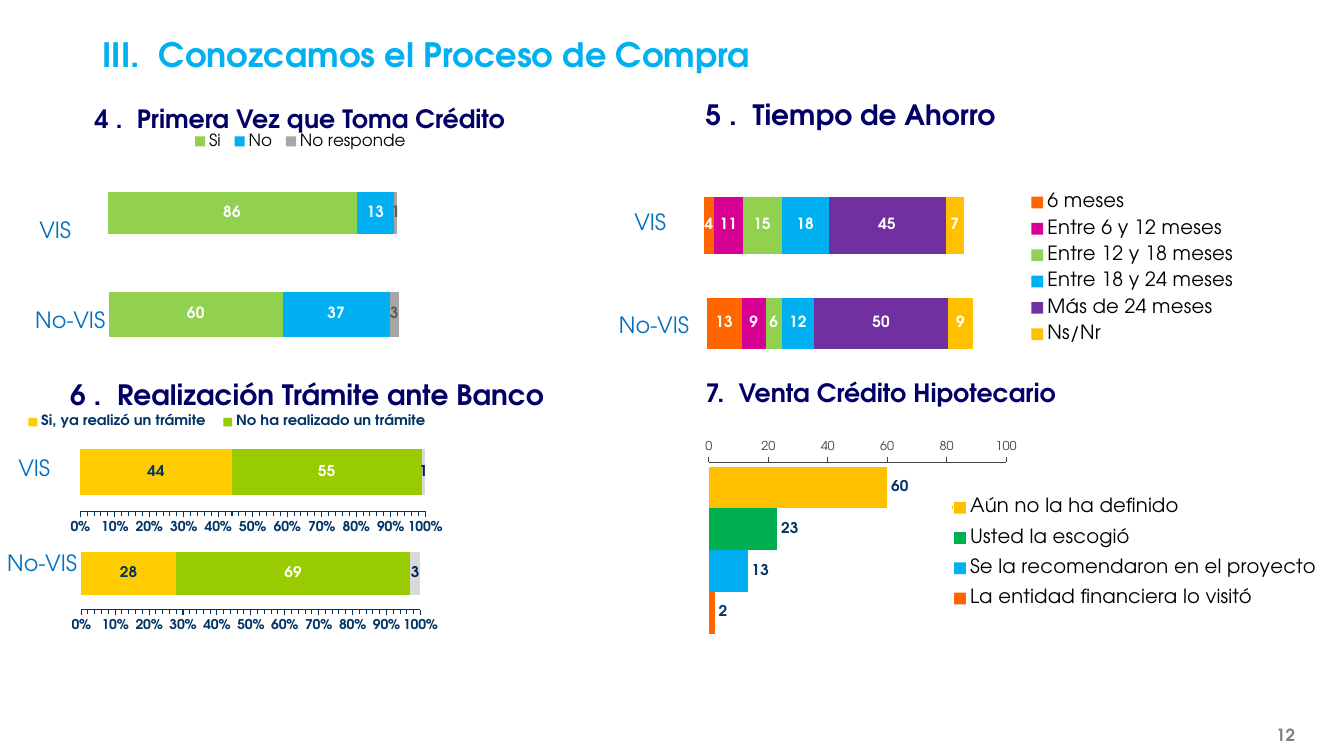
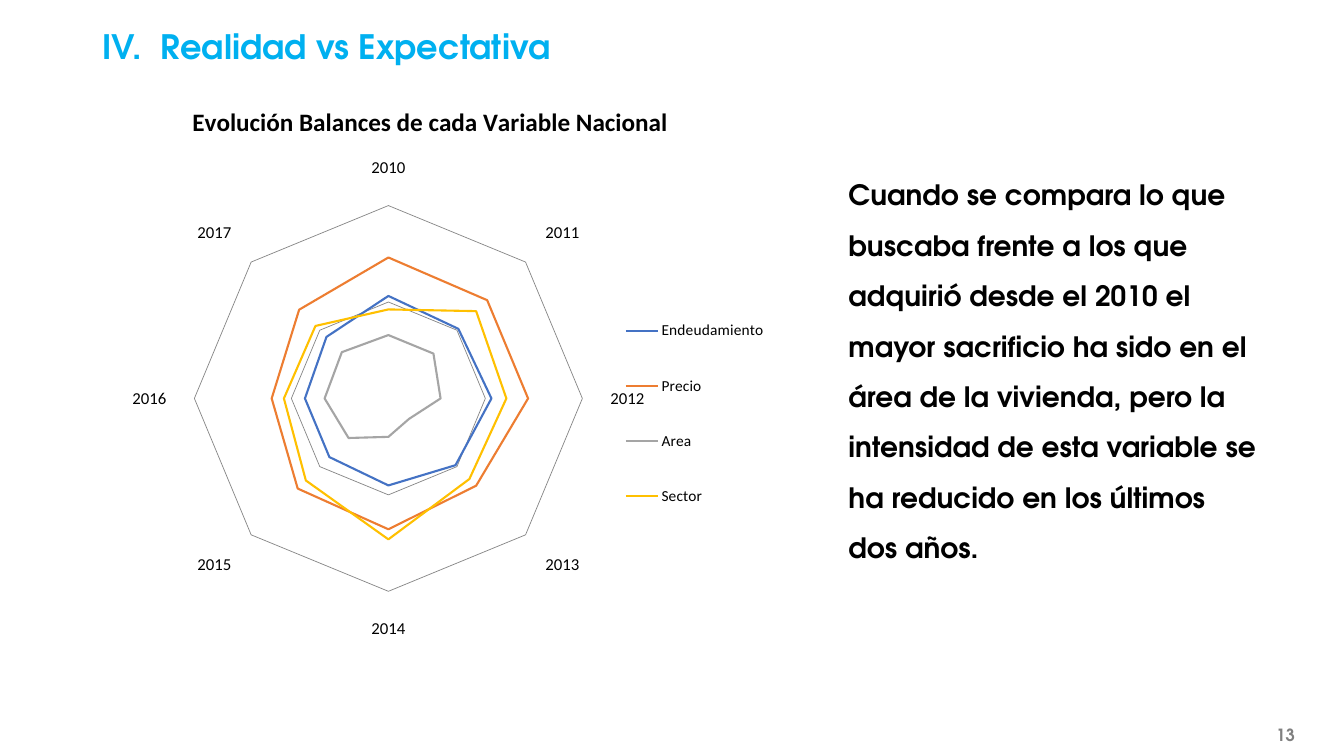
from dataclasses import dataclass

import pptx
import pptx.chart.data
import pptx.dml.color
import pptx.enum.chart
import pptx.enum.shapes
import pptx.enum.text
import pptx.oxml
import pptx.oxml.ns
import pptx.util
from lxml import etree

Pt = pptx.util.Pt
qn = pptx.oxml.ns.qn
Kind = pptx.enum.chart.XL_CHART_TYPE
LabelPosition = pptx.enum.chart.XL_LABEL_POSITION
LegendPosition = pptx.enum.chart.XL_LEGEND_POSITION
TickMark = pptx.enum.chart.XL_TICK_MARK
Align = pptx.enum.text.PP_ALIGN


@dataclass(frozen=True)
class Theme:
    font: str = "TeX Gyre Adventor"
    radar_font: str = "Calibri"
    title: str = "00B0F0"
    heading: str = "000066"
    row: str = "0070C0"
    navy: str = "003366"
    deep_navy: str = "002060"
    black: str = "000000"
    white: str = "FFFFFF"
    page: str = "808080"
    dark_gray: str = "595959"
    axis: str = "404040"
    grid: str = "868686"
    silver: str = "A6A6A6"
    pale: str = "D9D9D9"
    lime: str = "92D050"
    sky: str = "00B0F0"
    orange: str = "FF6600"
    magenta: str = "D60093"
    purple: str = "7030A0"
    amber: str = "FFC000"
    green: str = "00B050"
    yellow: str = "FFCC00"
    olive: str = "99CC00"
    radar_lines: tuple = ("4472C4", "ED7D31", "A5A5A5", "FFC000")
    title_size: int = 24
    heading_size: int = 20
    small_heading_size: int = 18
    row_size: int = 16
    legend_size: int = 14
    small_size: int = 12
    label_size: int = 11
    tick_size: int = 10
    fine_size: int = 9


THEME = Theme()


@dataclass(frozen=True)
class Box:
    left: float
    top: float
    width: float
    height: float

    def inner(self, dx, dy, width, height):
        return Box(self.left + dx, self.top + dy, width, height)

    def lengths(self):
        return [Pt(v) for v in (self.left, self.top, self.width, self.height)]


def rgb(color):
    return pptx.dml.color.RGBColor.from_string(color)


def style_font(font, size, color, bold=False, name=THEME.font):
    font.size = Pt(size)
    font.name = name
    font.bold = bold
    font.color.rgb = rgb(color)


def write(frame, text, size=12, color=THEME.black, bold=False,
          align=Align.LEFT, spacing=None):
    frame.word_wrap = True
    frame.auto_size = pptx.enum.text.MSO_AUTO_SIZE.NONE
    frame.vertical_anchor = pptx.enum.text.MSO_ANCHOR.TOP
    paragraph = frame.paragraphs[0]
    paragraph.alignment = align
    paragraph.line_spacing = spacing
    run = paragraph.add_run()
    run.text = text
    style_font(run.font, size, color, bold)


def add_text(slide, box, text, **style):
    write(slide.shapes.add_textbox(*box.lengths()).text_frame, text, **style)


def add_heading(slide, box, text, size=THEME.heading_size):
    add_text(slide, box, text, size=size, color=THEME.heading, bold=True)


def add_row_name(slide, box, text):
    add_text(slide, box, text, size=THEME.row_size, color=THEME.row)


def add_page_number(slide, box, page):
    badge = slide.shapes.add_shape(pptx.enum.shapes.MSO_SHAPE.OVAL, *box.lengths())
    badge.shadow.inherit = False
    badge.fill.solid()
    badge.fill.fore_color.rgb = rgb(THEME.white)
    badge.line.color.rgb = rgb(THEME.white)
    badge.line.width = Pt(1)
    badge.text_frame.margin_left = badge.text_frame.margin_right = 0
    write(badge.text_frame, page, size=THEME.small_size, color=THEME.page,
          bold=True, align=Align.CENTER)


def titled_slide(deck, title, top, page):
    slide = deck.slides.add_slide(deck.slide_layouts[5])
    heading = slide.shapes.title
    heading.left, heading.top, heading.width, heading.height = Box(66, top, 879, 36).lengths()
    write(heading.text_frame, title, size=THEME.title_size, color=THEME.title, bold=True)
    add_page_number(slide, Box(895.5, 510.5, 45.5, 26), page)
    return slide


def place(part, fractions, inner=False):
    for old in part.findall(qn("c:layout")):
        part.remove(old)
    layout = part.makeelement(qn("c:layout"))
    manual = etree.SubElement(layout, qn("c:manualLayout"))
    settings = [("layoutTarget", "inner")] if inner else []
    settings += [("xMode", "edge"), ("yMode", "edge")]
    settings += list(zip("xywh", fractions))
    for tag, value in settings:
        etree.SubElement(manual, qn("c:" + tag)).set("val", str(value))
    leading = {qn("c:tx"), qn("c:legendPos"), qn("c:legendEntry")}
    part.insert(sum(child.tag in leading for child in part), layout)


def chart_part(chart, tag):
    return next(chart._chartSpace.iter(qn("c:" + tag)))


def add_legend(chart, fractions, position, size, color=THEME.black, bold=False,
               font=THEME.font, omitted=None):
    chart.has_legend = True
    legend = chart.legend
    legend.position = position
    legend.include_in_layout = False
    style_font(legend.font, size, color, bold, font)
    part = chart_part(chart, "legend")
    if omitted is not None:
        entry = part.makeelement(qn("c:legendEntry"))
        etree.SubElement(entry, qn("c:idx")).set("val", str(omitted))
        etree.SubElement(entry, qn("c:delete")).set("val", "1")
        part.find(qn("c:legendPos")).addnext(entry)
    place(part, fractions)


def add_chart(slide, box, kind, categories, series, plot, font=THEME.font):
    data = pptx.chart.data.CategoryChartData(number_format="0")
    data.categories = categories
    for name, values in series:
        data.add_series(name, values)
    chart = slide.shapes.add_chart(kind, *box.lengths(), data).chart
    style_font(chart.font, THEME.tick_size, THEME.black, name=font)
    chart.has_title = False
    chart.has_legend = False
    place(chart_part(chart, "plotArea"), plot, inner=True)
    return chart


def add_bars(slide, box, answers, values, plot, kind=Kind.BAR_STACKED,
             gap=20, top=100, step=20, labelled=True):
    series = [(name, [value]) for (name, _, _), value in zip(answers, values)]
    chart = add_chart(slide, box, kind, ["1"], series, plot)
    bars = chart.plots[0]
    bars.vary_by_categories = False
    bars.gap_width = gap
    clustered = kind == Kind.BAR_CLUSTERED
    bars.overlap = 0 if clustered else 100
    chart.category_axis.visible = False
    chart.category_axis.reverse_order = clustered
    scale = chart.value_axis
    scale.has_major_gridlines = False
    scale.visible = False
    scale.minimum_scale = 0
    scale.maximum_scale = top
    scale.major_unit = step
    for bar, (_, fill, label_color) in zip(bars.series, answers):
        bar.format.fill.solid()
        bar.format.fill.fore_color.rgb = rgb(fill)
        bar.format.line.fill.background()
        bar.invert_if_negative = False
        if labelled:
            labels = bar.data_labels
            labels.show_value = True
            labels.number_format = "0"
            labels.number_format_is_linked = False
            labels.position = LabelPosition.OUTSIDE_END if clustered else LabelPosition.CENTER
            style_font(labels.font, THEME.label_size, label_color, True)
    return chart


def show_scale(chart, number_format, size, color, bold=False):
    scale = chart.value_axis
    scale.visible = True
    scale.major_tick_mark = TickMark.OUTSIDE
    scale.tick_labels.number_format = number_format
    scale.tick_labels.number_format_is_linked = False
    style_font(scale.tick_labels.font, size, color, bold)
    scale.format.line.color.rgb = rgb(color)
    scale.format.line.width = Pt(0.75)


def add_key(slide, box, answers, fractions, first_marker):
    values = [100] + [None] * (len(answers) - 1)
    chart = add_bars(slide, box, answers, values, (*first_marker, 0.01, 0.02),
                     top=329, step=66, labelled=False)
    add_legend(chart, fractions, LegendPosition.RIGHT, THEME.legend_size)


def first_credit(slide, box):
    answers = [("Si", THEME.lime, THEME.white), ("No", THEME.sky, THEME.white),
               ("No responde", THEME.silver, THEME.dark_gray)]
    add_heading(slide, box.inner(42.5, 4, 402, 38), "4 .  Primera Vez que Toma Crédito",
                THEME.small_heading_size)
    vis = add_bars(slide, box.inner(49, 22.5, 246, 314), answers, [86, 13, 1],
                   (0.04, 0.146, 0.841, 0.114))
    add_legend(vis, (0.27, 0.01, 0.66, 0.06), LegendPosition.TOP, THEME.small_size)
    add_bars(slide, box.inner(50, 53, 246, 340.5), answers, [60, 37, 3],
             (0.04, 0.254, 0.841, 0.114))
    add_row_name(slide, box.inner(3, 85, 72, 27), "VIS")
    add_row_name(slide, box.inner(0, 149, 72, 27), "No-VIS")


def savings_time(slide, box):
    names = ["6 meses", "Entre 6 y 12 meses", "Entre 12 y 18 meses",
             "Entre 18 y 24 meses", "Más de 24 meses", "Ns/Nr"]
    fills = [THEME.orange, THEME.magenta, THEME.lime, THEME.sky, THEME.purple, THEME.amber]
    answers = [(name, fill, THEME.white) for name, fill in zip(names, fills)]
    add_heading(slide, box.inner(65, 0, 402, 38), "5 .  Tiempo de Ahorro")
    add_key(slide, box.inner(246, 40, 267, 148), answers, (0.19, 0.18, 0.6, 0.8), (0.23, 0.26))
    add_bars(slide, box.inner(40, 62.5, 246, 57), answers, [4, 11, 15, 18, 45, 7],
             (0.125, 0.146, 0.755, 0.856))
    add_bars(slide, box.inner(48, 136, 246, 51), answers, [13, 9, 6, 12, 50, 9],
             (0.101, 0.146, 0.78, 0.856))
    add_row_name(slide, box.inner(14, 79, 72, 27), "VIS")
    add_row_name(slide, box.inner(3, 153, 72, 27), "No-VIS")


def bank_procedure(slide, box):
    answers = [("Si, ya realizó un trámite", THEME.yellow, THEME.navy),
               ("No ha realizado un trámite", THEME.olive, THEME.white),
               ("No responde", THEME.pale, THEME.deep_navy)]
    add_heading(slide, box.inner(43, 0, 402, 38), "6 .  Realización Trámite ante Banco")
    rows = [(box.inner(5, 21, 317.5, 94), [44, 55, 1], (0.165, 0.245, 0.776, 0.617)),
            (box.inner(3.5, 97, 315.5, 88), [28, 69, 3], (0.173, 0.245, 0.768, 0.617))]
    charts = []
    for frame, values, plot in rows:
        chart = add_bars(slide, frame, answers, values, plot,
                         kind=Kind.BAR_STACKED_100, gap=70, top=1, step=0.1)
        show_scale(chart, "0%", THEME.tick_size, THEME.navy, True)
        chart.value_axis.minor_unit = 0.02
        chart.value_axis.minor_tick_mark = TickMark.OUTSIDE
        charts.append(chart)
    add_legend(charts[0], (0.02, 0.08, 0.95, 0.16), LegendPosition.TOP, 10.5,
               THEME.navy, True, omitted=0)
    add_row_name(slide, box.inner(6, 55, 72, 27), "VIS")
    add_row_name(slide, box.inner(-2, 123, 72, 27), "No-VIS")


def mortgage_sale(slide, box):
    names = ["Aún no la ha definido", "Usted la escogió",
             "Se la recomendaron en el proyecto", "La entidad financiera lo visitó"]
    fills = [THEME.amber, THEME.green, THEME.sky, THEME.orange]
    answers = [(name, fill, THEME.navy) for name, fill in zip(names, fills)]
    add_heading(slide, box.inner(29, 0, 454, 38), "7.  Venta Crédito Hipotecario",
                THEME.small_heading_size)
    chart = add_bars(slide, box.inner(3.5, 49.5, 281, 141.5), answers, [60, 23, 13, 2],
                     (0.124, 0.075, 0.756, 0.916), kind=Kind.BAR_CLUSTERED)
    show_scale(chart, "0", THEME.fine_size, THEME.axis)
    add_key(slide, box.inner(194, 67, 298, 135), answers, (0.03, 0.11, 0.94, 0.7), (0.06, 0.21))


def balance_radar(slide, box):
    balances = [("Endeudamiento", [9, 3, 9, -3, -14, -20, -20, -14]),
                ("Precio", [66, 63, 63, 40, 51, 46, 29, 43]),
                ("Area", [-49, -49, -66, -100, -86, -60, -49, -46]),
                ("Sector", [-11, 40, 31, 26, 66, 29, 11, 9])]
    years = [str(year) for year in range(2010, 2018)]
    chart = add_chart(slide, box, Kind.RADAR, years, balances,
                      (0.184, 0.167, 0.532, 0.78), THEME.radar_font)
    chart.has_title = True
    heading = chart.chart_title.text_frame
    heading.text = "Evolución Balances de cada Variable Nacional"
    style_font(heading.paragraphs[0].runs[0].font, THEME.small_heading_size,
               THEME.black, True, THEME.radar_font)
    place(chart_part(chart, "title"), (0.175, 0))
    add_legend(chart, (0.76, 0.345, 0.22, 0.48), LegendPosition.RIGHT,
               THEME.label_size, font=THEME.radar_font)
    style_font(chart.category_axis.tick_labels.font, THEME.small_size, THEME.black,
               name=THEME.radar_font)
    scale = chart.value_axis
    scale.visible = False
    scale.minimum_scale, scale.maximum_scale, scale.major_unit = -143, 143, 143
    scale.has_major_gridlines = True
    scale.major_gridlines.format.line.color.rgb = rgb(THEME.grid)
    scale.major_gridlines.format.line.width = Pt(0.5)
    for line, color in zip(chart.plots[0].series, THEME.radar_lines):
        line.smooth = False
        line.format.line.color.rgb = rgb(color)
        line.format.line.width = Pt(1.5)


def main():
    deck = pptx.Presentation()
    deck.slide_width, deck.slide_height = Pt(960), Pt(540)

    purchase = titled_slide(deck, "III.  Conozcamos el Proceso de Compra", 20.5, "12")
    first_credit(purchase, Box(18, 66, 414, 200))
    savings_time(purchase, Box(432, 66, 528, 200))
    bank_procedure(purchase, Box(0, 266, 468, 200))
    mortgage_sale(purchase, Box(468, 266, 492, 200))

    reality = titled_slide(deck, "IV.  Realidad vs Expectativa", 15, "13")
    balance_radar(reality, Box(43, 71.5, 521, 385))
    add_text(reality, Box(599, 111.5, 306, 327),
             "Cuando se compara lo que buscaba frente a los que adquirió desde el 2010 "
             "el mayor sacrificio ha sido en el área de la vivienda, pero la intensidad "
             "de esta variable se ha reducido en los últimos dos años.",
             size=THEME.heading_size, bold=True, spacing=1.5)
    deck.save("out.pptx")


if __name__ == "__main__":
    main()
